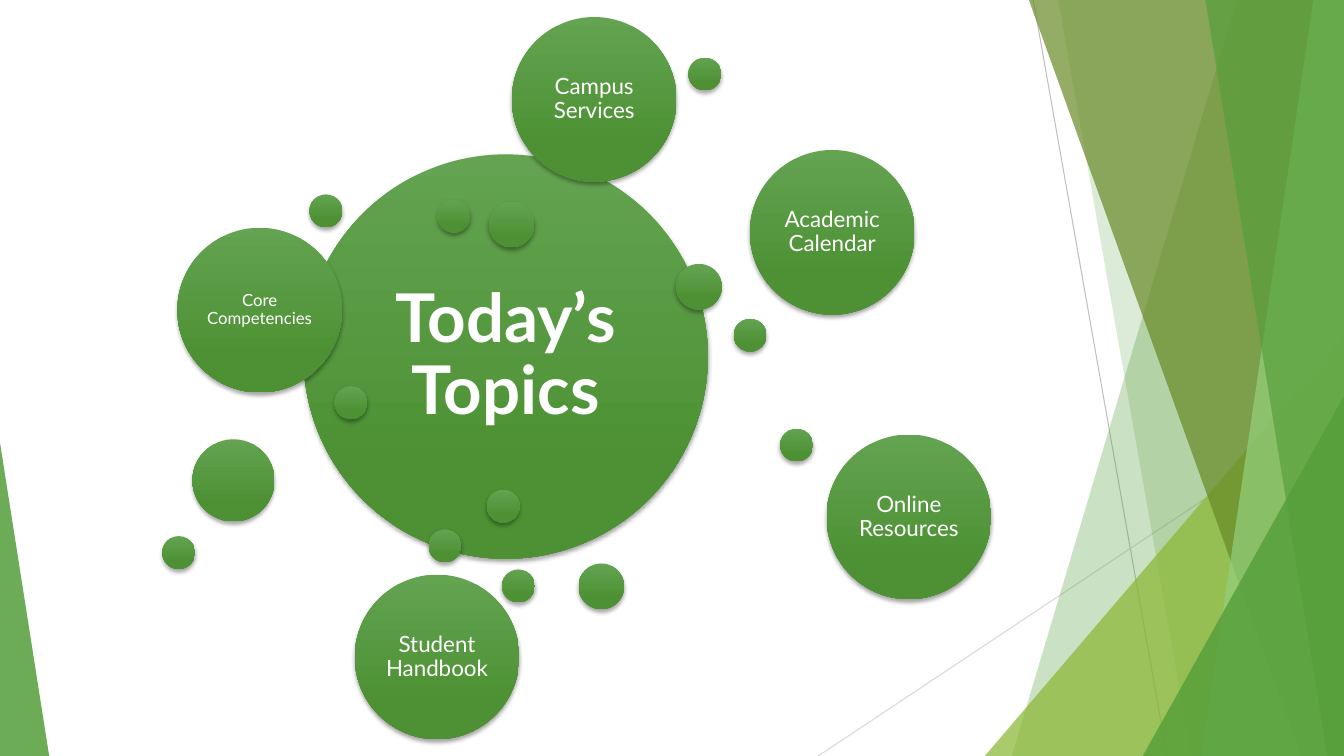
from lxml import etree
from pptx import Presentation
from pptx.dml.color import RGBColor
from pptx.enum.shapes import MSO_CONNECTOR, MSO_SHAPE
from pptx.enum.text import MSO_ANCHOR, PP_ALIGN
from pptx.oxml import parse_xml
from pptx.oxml.ns import nsdecls, qn
from pptx.util import Cm, Pt

WHITE = RGBColor(0xFF, 0xFF, 0xFF)
GREEN = RGBColor(0x54, 0x9E, 0x39)
LIME = RGBColor(0x8A, 0xB8, 0x33)
OLIVE = RGBColor(0x67, 0x8A, 0x26)
MINT = RGBColor(0x93, 0xD0, 0x7D)
LIGHT = RGBColor(0x63, 0xA3, 0x51)
DEEP = RGBColor(0x4D, 0x91, 0x34)
GREY = RGBColor(0xBF, 0xBF, 0xBF)
PALE = RGBColor(0xD9, 0xD9, 0xD9)

WIDE, HIGH = 33.87, 19.05
SHADOW = (
    f'<a:effectLst {nsdecls("a")}><a:outerShdw blurRad="38100" dist="25400" '
    'dir="5400000" rotWithShape="0"><a:srgbClr val="000000">'
    '<a:alpha val="35000"/></a:srgbClr></a:outerShdw></a:effectLst>'
)

deck = Presentation()
deck.slide_width, deck.slide_height = Cm(WIDE), Cm(HIGH)
slide = deck.slides.add_slide(deck.slide_layouts[6])
shapes = slide.shapes


def slab(top, foot):
    pen = shapes.build_freeform(Cm(top), 0)
    pen.add_line_segments(
        [(Cm(WIDE), 0), (Cm(WIDE), Cm(HIGH)), (Cm(foot), Cm(HIGH))], close=True
    )
    return pen.convert_to_shape()


def wedge(left, width, height, tip):
    shape = shapes.add_shape(
        MSO_SHAPE.ISOSCELES_TRIANGLE,
        Cm(left), Cm(HIGH - height), Cm(width), Cm(height),
    )
    shape.adjustments[0] = tip
    return shape


for x1, y1, x2, hue in [(26.04, 0, 29.41, GREY), (WIDE, 10.24, 20.62, PALE)]:
    line = shapes.add_connector(
        MSO_CONNECTOR.STRAIGHT, Cm(x1), Cm(y1), Cm(x2), Cm(HIGH)
    )
    line.line.color.rgb = hue
    line.line.width = Pt(0.75)
    etree.SubElement(line._element.spPr, qn("a:effectLst"))

facets = [
    (slab(31.17, 25.5), GREEN, 30),
    (slab(26.67, 30.02), GREEN, 20),
    (wedge(24.82, 9.05, 10.59, 1), LIME, 72),
    (slab(25.93, 32.79), OLIVE, 70),
    (slab(33.1, 30.28), MINT, 70),
    (slab(30.38, 33.45), GREEN, 65),
    (wedge(28.8, 5.07, 9.07, 1), GREEN, 80),
    (wedge(0, 1.24, 7.9, 0), GREEN, 85),
]
for shape, hue, alpha in facets:
    shape.shadow.inherit = False
    shape.line.fill.background()
    shape.fill.solid()
    shape.fill.fore_color.rgb = hue
    tone = shape._element.spPr.find(qn("a:solidFill"))[0]
    etree.SubElement(tone, qn("a:alpha"), val=str(alpha * 1000))

topics = [
    (7.65, 3.89, 10.19, "Today’s Topics", 48, 0.51),
    (4.47, 5.74, 4.15, "Core Competencies", 12, 0.12),
    (18.9, 3.78, 4.15, "Academic Calendar", 16, 0.18),
    (20.83, 10.95, 4.15, "Online Resources", 16, 0.18),
    (8.94, 14.48, 4.15, "Student Handbook", 16, 0.18),
    (12.9, 0.43, 4.15, "Campus Services", 16, 0.18),
]
dots = {
    0.83: [
        (10.8, 13.34), (18.49, 8.03), (11.02, 5.03), (8.43, 9.73), (4.09, 13.51),
        (12.27, 12.34), (19.66, 10.8), (12.65, 14.35), (7.8, 4.9), (17.35, 1.45),
    ],
    1.15: [(14.58, 14.2), (12.32, 5.08), (17.04, 6.65)],
    2.07: [(4.85, 11.07)],
}
plain = [(x, y, size, "", 0, 0) for size, spots in dots.items() for x, y in spots]

for x, y, size, label, points, inset in topics + plain:
    ball = shapes.add_shape(MSO_SHAPE.OVAL, Cm(x), Cm(y), Cm(size), Cm(size))
    ball.line.fill.background()
    ball.fill.gradient()
    ball.fill.gradient_angle = 270
    for stop, hue, place in zip(ball.fill.gradient_stops, (LIGHT, DEEP), (0, 0.78)):
        stop.color.rgb = hue
        stop.position = place
    ball._element.spPr.append(parse_xml(SHADOW))
    if label:
        frame = ball.text_frame
        frame.text = label
        frame.word_wrap = True
        frame.vertical_anchor = MSO_ANCHOR.MIDDLE
        frame.margin_left = frame.margin_right = Cm(inset)
        frame.margin_top = frame.margin_bottom = Cm(inset)
        para = frame.paragraphs[0]
        para.alignment = PP_ALIGN.CENTER
        para.line_spacing = 0.9
        font = para.runs[0].font
        font.name = "Lato"
        font.size = Pt(points)
        font.bold = points == 48
        font.color.rgb = WHITE

deck.save("out.pptx")
